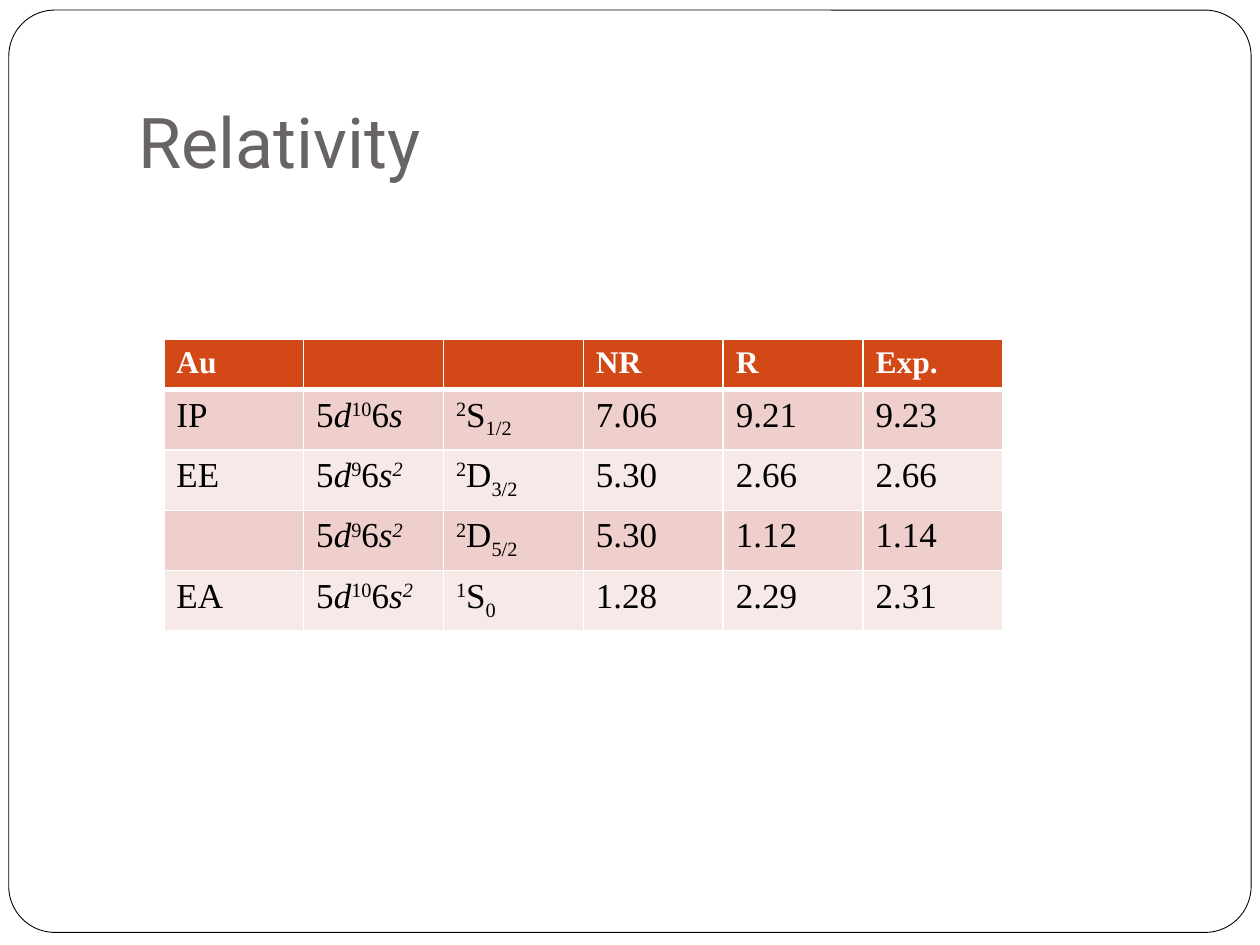
from lxml import etree
from pptx import Presentation, util as u
from pptx.dml.color import RGBColor
from pptx.enum import shapes, text
from pptx.oxml.ns import qn


def color(value):
    return RGBColor.from_string(value)


def add_border(cell, side, points):
    line = etree.SubElement(cell._tc.get_or_add_tcPr(), qn(f"a:ln{side}"), w=str(u.Pt(points)))
    fill = etree.SubElement(line, qn("a:solidFill"))
    etree.SubElement(fill, qn("a:srgbClr"), val="FFFFFF")


deck = Presentation()
deck.slide_width, deck.slide_height = u.Inches(10), u.Inches(7.5)
page = deck.slides.add_slide(deck.slide_layouts[6])

frame = page.shapes.add_shape(
    shapes.MSO_SHAPE.ROUNDED_RECTANGLE,
    u.Inches(0.07), u.Inches(0.08), u.Inches(9.86), u.Inches(7.32))
frame.adjustments[0] = 0.05
frame.shadow.inherit = False
frame.fill.solid()
frame.fill.fore_color.rgb = color("FFFFFF")
frame.line.color.rgb = color("000000")
frame.line.width = u.Pt(0.5)

title = page.shapes.add_textbox(u.Inches(1), u.Inches(0.3), u.Inches(8.5), u.Inches(1.25))
box = title.text_frame
box.word_wrap = True
box.vertical_anchor = text.MSO_ANCHOR.BOTTOM
box.margin_bottom = u.Inches(0.1)
para = box.paragraphs[0]
para.text = "Relativity"
para.font.name = "Roboto"
para.font.size = u.Pt(40)
para.font.color.rgb = color("696464")

# Marks before a span: / italic, ^ superscript, _ subscript
rows = [
    ["Au", "", "", "NR", "R", "Exp."],
    ["IP", "5 /d ^10 6 /s", "^2 S _1/2", "7.06", "9.21", "9.23"],
    ["EE", "5 /d ^9 6 /s /^2", "^2 D _3/2", "5.30", "2.66", "2.66"],
    ["", "5 /d ^9 6 /s /^2", "^2 D _5/2", "5.30", "1.12", "1.14"],
    ["EA", "5 /d ^10 6 /s /^2", "^1 S _0", "1.28", "2.29", "2.31"],
]
header_height, row_height, column_width = 0.36, 0.45, 1.11
baselines = {"^": "30000", "_": "-25000"}

table = page.shapes.add_table(
    len(rows), len(rows[0]), u.Inches(1.3), u.Inches(2.69),
    u.Inches(column_width * len(rows[0])),
    u.Inches(header_height + row_height * (len(rows) - 1))).table
for column in table.columns:
    column.width = u.Inches(column_width)

for r, values in enumerate(rows):
    header = r == 0
    table.rows[r].height = u.Inches(header_height if header else row_height)
    for c, value in enumerate(values):
        cell = table.cell(r, c)
        for side, points in (("L", 1), ("R", 1), ("T", 3 if r == 1 else 1), ("B", 3 if header else 1)):
            add_border(cell, side, points)
        cell.fill.solid()
        cell.fill.fore_color.rgb = color("D34817" if header else ("F7E9E8", "EFCFCC")[r % 2])
        para = cell.text_frame.paragraphs[0]
        para.font.name = "Times New Roman"
        para.font.size = u.Pt(18 if header else 20)
        para.font.bold = header
        para.font.color.rgb = color("FFFFFF" if header else "000000")
        for token in value.split():
            content = token.lstrip("/^_")
            marks = token[:len(token) - len(content)]
            span = para.add_run()
            span.text = content
            if "/" in marks:
                span.font.italic = True
            for mark in marks.replace("/", ""):
                span._r.get_or_add_rPr().set("baseline", baselines[mark])

deck.save("out.pptx")
